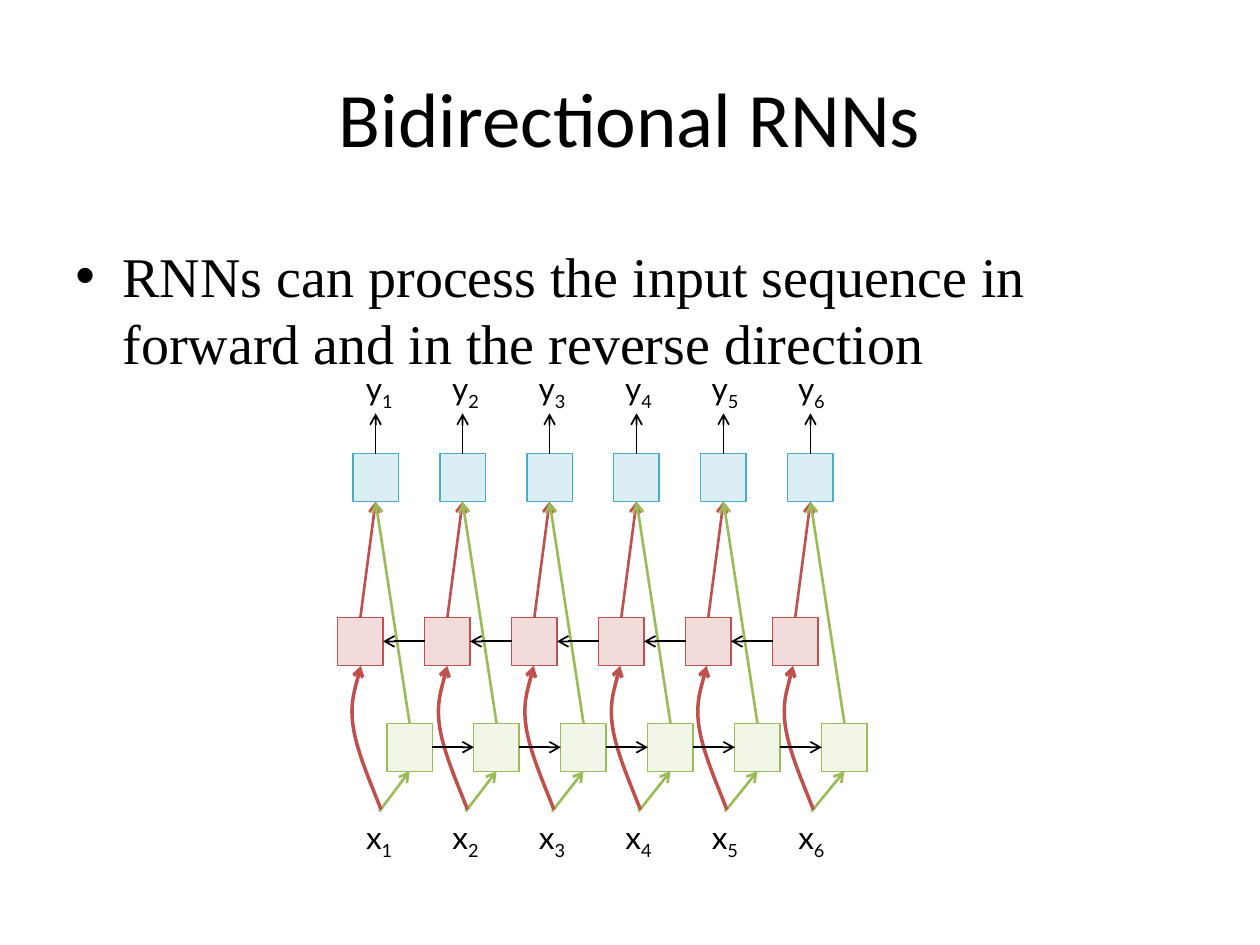
from dataclasses import dataclass

from lxml.etree import SubElement
from pptx import Presentation
from pptx.dml.color import RGBColor
from pptx.enum.shapes import MSO_CONNECTOR as CONN, MSO_SHAPE as SHAPE
from pptx.enum.text import MSO_ANCHOR as ANCHOR, PP_ALIGN as ALIGN
from pptx.oxml.ns import qn
from pptx.util import Pt


@dataclass(frozen=True)
class Theme:
    text: str = "000000"
    output: tuple = ("93CDDD", "4BACC6")
    backward: tuple = ("D99694", "C0504D")
    forward: tuple = ("D7E4BD", "9BBB59")
    alpha: int = 33
    title_font: str = "Calibri"
    body_font: str = "Times New Roman"
    label_font: str = "Lato"
    title_size: int = 44
    body_size: int = 32
    label_size: int = 18


THEME = Theme()
STEPS = 6
CELL_PITCH, LABEL_PITCH = 49.7, 49.4
CELL_W, CELL_H = 25.9, 27.4
LABEL_W, LABEL_H = 31.7, 29
CURVE = [(-6.5, -16.5), (-13.7, -33.1), (-15.8, -46.8),
         (-18, -60.5), (-11.5, -82), (-11.5, -82)]


def rgb(color):
    return RGBColor.from_string(color)


def style_font(font, name, size):
    font.name = name
    font.size = Pt(size)
    font.color.rgb = rgb(THEME.text)


def style_arrow(s, color, width):
    s.line.color.rgb = rgb(color)
    s.line.width = Pt(width)
    sp_pr = s._element.spPr
    SubElement(sp_pr.find(qn("a:ln")), qn("a:tailEnd"), type="arrow")
    if sp_pr.find(qn("a:effectLst")) is None:
        SubElement(sp_pr, qn("a:effectLst"))


def add_arrow(shapes, color, width, start, end):
    x, y = start if isinstance(start[0], (int, float)) else (0, 0)
    x2, y2 = end if isinstance(end[0], (int, float)) else (0, 0)
    s = shapes.add_connector(CONN.STRAIGHT, Pt(x), Pt(y), Pt(x2), Pt(y2))
    if not isinstance(start[0], (int, float)):
        s.begin_connect(*start)
    if not isinstance(end[0], (int, float)):
        s.end_connect(*end)
    style_arrow(s, color, width)


def add_curve(shapes, color, x, y):
    builder = shapes.build_freeform(Pt(x), Pt(y))
    builder.add_line_segments([(Pt(x + dx), Pt(y + dy)) for dx, dy in CURVE], close=False)
    s = builder.convert_to_shape()
    s.shadow.inherit = False
    s.fill.background()
    segments = s._element.xpath(".//a:lnTo")
    for i in range(0, len(segments), 3):
        bezier = SubElement(segments[i].getparent(), qn("a:cubicBezTo"))
        for segment in segments[i:i + 3]:
            bezier.append(segment[0])
            segment.getparent().remove(segment)
    style_arrow(s, color, 2)


def add_cell(shapes, x, y, colors):
    s = shapes.add_shape(SHAPE.RECTANGLE, Pt(x), Pt(y), Pt(CELL_W), Pt(CELL_H))
    fill, line = colors
    s.shadow.inherit = False
    s.fill.solid()
    s.fill.fore_color.rgb = rgb(fill)
    color = s._element.spPr.find(qn("a:solidFill"))[0]
    SubElement(color, qn("a:alpha"), val=str(THEME.alpha * 1000))
    s.line.color.rgb = rgb(line)
    s.line.width = Pt(0.75)
    return s


def add_label(shapes, center, top, letter, index):
    s = shapes.add_textbox(Pt(center - LABEL_W / 2), Pt(top), Pt(LABEL_W), Pt(LABEL_H))
    tf = s.text_frame
    tf.word_wrap = False
    p = tf.paragraphs[0]
    p.alignment = ALIGN.CENTER
    for text in (letter, str(index)):
        r = p.add_run()
        r.text = text
        style_font(r.font, THEME.label_font, THEME.label_size)
    r.font._element.set("baseline", "-25000")


def add_title(slide, left, top, width, height):
    s = slide.shapes.title
    s.left, s.top, s.width, s.height = Pt(left), Pt(top), Pt(width), Pt(height)
    tf = s.text_frame
    tf.text = "Bidirectional RNNs"
    tf.vertical_anchor = ANCHOR.MIDDLE
    p = tf.paragraphs[0]
    p.alignment = ALIGN.CENTER
    style_font(p.runs[0].font, THEME.title_font, THEME.title_size)


def add_body(slide, left, top, width, height):
    tf = slide.shapes.add_textbox(Pt(left), Pt(top), Pt(width), Pt(height)).text_frame
    tf.word_wrap = True
    tf.text = "RNNs can process the input sequence in forward and in the reverse direction"
    p = tf.paragraphs[0]
    p_pr = p._p.get_or_add_pPr()
    p_pr.set("marL", str(Pt(27)))
    p_pr.set("indent", str(Pt(-27)))
    SubElement(p_pr, qn("a:buFont"), typeface="Arial")
    SubElement(p_pr, qn("a:buChar"), char="•")
    style_font(p.runs[0].font, THEME.body_font, THEME.body_size)


def add_network(slide, left, top):
    shapes = slide.shapes
    steps = range(STEPS)
    rows = [(8.7, 51.8, THEME.output), (0, 145.4, THEME.backward), (28.1, 205.9, THEME.forward)]
    outputs, backwards, forwards = [
        [add_cell(shapes, left + dx + i * CELL_PITCH, top + dy, colors) for i in steps]
        for dx, dy, colors in rows
    ]
    red, green = THEME.backward[1], THEME.forward[1]
    input_top = top + 256.3

    for i in steps:
        center = left + 23.7 + i * LABEL_PITCH
        add_label(shapes, center, top, "y", i + 1)
        add_label(shapes, center, input_top, "x", i + 1)
        tip = (left + 8.7 + CELL_W / 2 + i * CELL_PITCH, top + 28.8)
        add_arrow(shapes, THEME.text, 1, (outputs[i], 0), tip)
        add_arrow(shapes, green, 1.5, (center, input_top), (forwards[i], 0 + 2))
        add_curve(shapes, red, center + 1, input_top - 1.2)
        add_arrow(shapes, red, 1.5, (backwards[i], 0), (outputs[i], 2))
        add_arrow(shapes, green, 1.5, (forwards[i], 0), (outputs[i], 2))

    for i in range(STEPS - 1):
        add_arrow(shapes, THEME.text, 1, (forwards[i], 3), (forwards[i + 1], 1))
        add_arrow(shapes, THEME.text, 1, (backwards[i + 1], 1), (backwards[i], 3))


def main():
    prs = Presentation()
    prs.slide_width, prs.slide_height = Pt(720), Pt(540)
    slide = prs.slides.add_slide(prs.slide_layouts[5])
    add_title(slide, 36, 21.6, 648, 90)
    add_body(slide, 36, 134.6, 588, 367)
    add_network(slide, 193, 207.4)
    prs.save("out.pptx")


if __name__ == "__main__":
    main()
